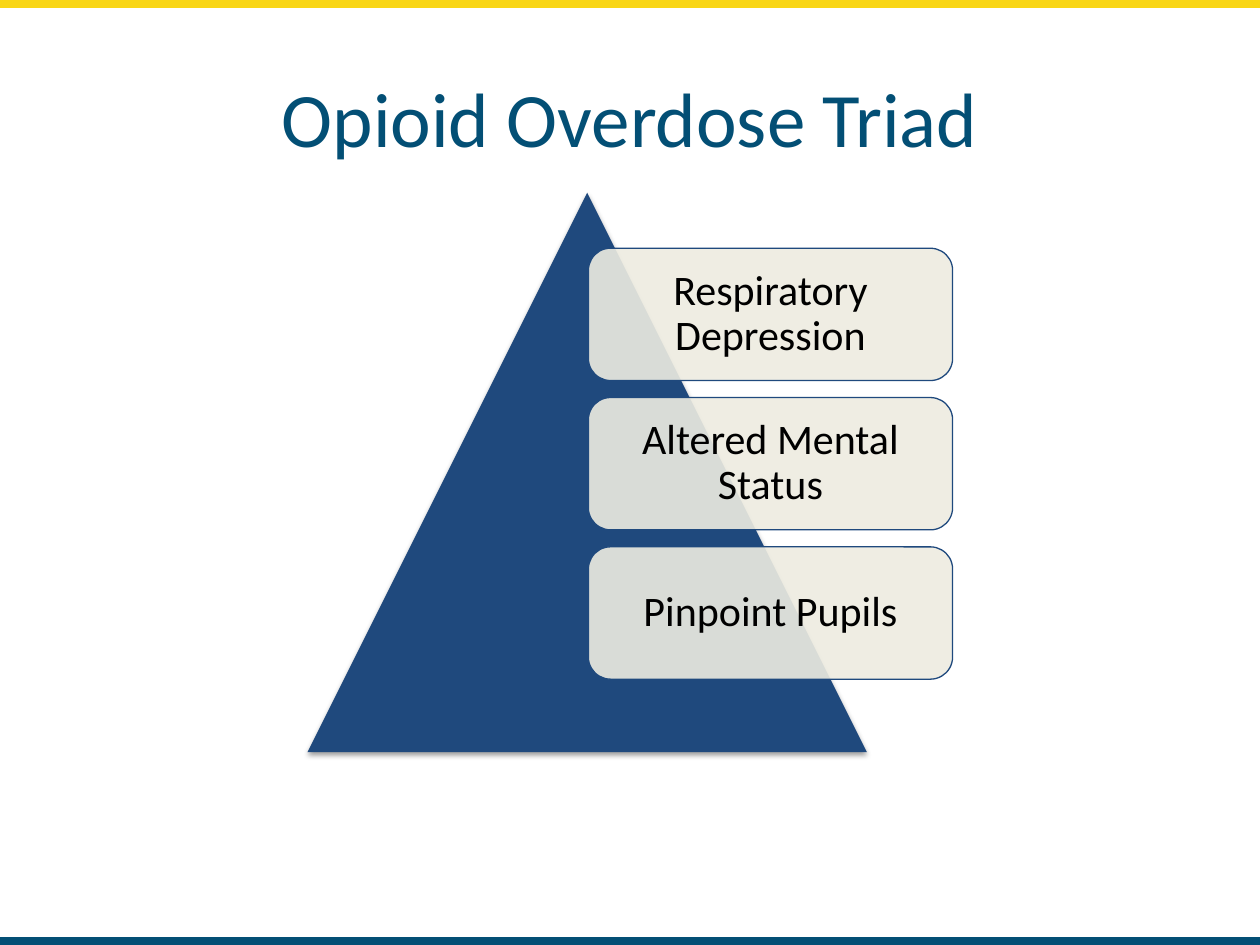
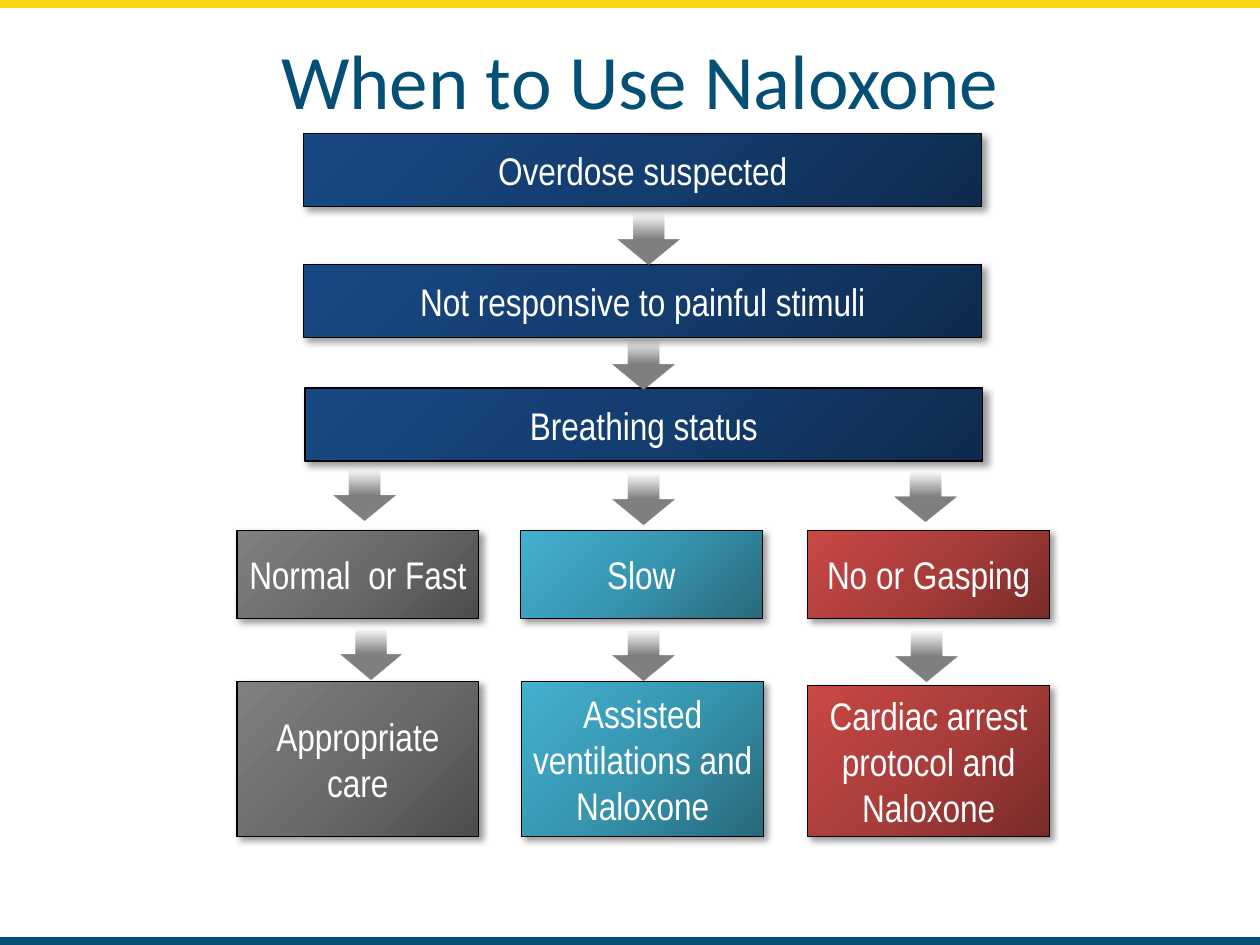
import pptx
import pptx.util
import pptx.dml.color
import pptx.enum.shapes
import pptx.enum.text
import pptx.oxml
import pptx.oxml.ns

Pt = pptx.util.Pt
Kind = pptx.enum.shapes.MSO_SHAPE
qn = pptx.oxml.ns.qn

COLS, ROWS = 100, 75
HEX = {
    "title": "034F75", "gold": "F9D616", "navy": "1F497D", "cream": "EEECE1",
    "black": "000000", "white": "FFFFFF", "gray": "808080",
}
SHADES = {
    "blue": ("0E2B4E", "143D6F", "184884"),
    "gray": ("4C4C4C", "6B6B6B", "808080"),
    "teal": ("27697B", "3795AF", "42B1CF"),
    "red": ("772B29", "A93D3A", "C94844"),
}


def rgb(name):
    return pptx.dml.color.RGBColor.from_string(HEX[name])


def node(xml):
    """Parse an XML snippet whose root is in the drawing namespace."""
    return pptx.oxml.parse_xml(xml.replace(" ", f" {pptx.oxml.ns.nsdecls('a')} ", 1))


class Deck:
    """Holds the style and the current slide; places are (col, row, cols, rows)."""

    def __init__(self):
        self.show = pptx.Presentation()
        self.show.slide_width = pptx.util.Inches(10)
        self.show.slide_height = pptx.util.Inches(7.5)
        self.slide = None

    def place(self, at):
        wide, high = self.show.slide_width, self.show.slide_height
        units = (wide / COLS, high / ROWS) * 2
        return [round(length * unit) for length, unit in zip(at, units)]

    def start(self, title, at):
        """Open a slide with its title and the two edge bands."""
        self.slide = self.show.slides.add_slide(self.show.slide_layouts[5])
        head = self.slide.shapes.title
        head.left, head.top, head.width, head.height = self.place(at)
        self.label(head, title, 44, "Calibri", "title")
        for row, color in ((ROWS - 0.5, "title"), (0, "gold")):
            self.shape(Kind.RECTANGLE, (0, row, COLS, 0.5), color, (color, 2))

    def shape(self, kind, at, fill=None, line=None):
        item = self.slide.shapes.add_shape(kind, *self.place(at))
        item.shadow.inherit = False
        if fill:
            item.fill.solid()
            item.fill.fore_color.rgb = rgb(fill)
        if line:
            item.line.color.rgb = rgb(line[0])
            item.line.width = Pt(line[1])
        else:
            item.line.fill.background()
        return item

    def label(self, item, text, size, font, color, inset=(0.1, 0.05), spacing=None):
        frame = item.text_frame
        frame.text = text
        frame.word_wrap = True
        frame.vertical_anchor = pptx.enum.text.MSO_ANCHOR.MIDDLE
        frame.margin_left = frame.margin_right = pptx.util.Inches(inset[0])
        frame.margin_top = frame.margin_bottom = pptx.util.Inches(inset[1])
        para = frame.paragraphs[0]
        para.alignment = pptx.enum.text.PP_ALIGN.CENTER
        if spacing:
            para.line_spacing = spacing
        for run in para.runs:
            run.font.size = Pt(size)
            run.font.name = font
            run.font.color.rgb = rgb(color)

    def shade(self, item, angle, stops):
        """Fill with (hex, alpha percent) stops, evenly spread, angle clockwise."""
        item.fill.gradient()
        item.fill.gradient_angle = 360 - angle
        grad = item._element.spPr.find(qn("a:gradFill"))
        points = grad.find(qn("a:gsLst"))
        for old in list(points):
            points.remove(old)
        for index, (color, alpha) in enumerate(stops):
            points.append(node(
                f'<a:gs pos="{index * 100000 // (len(stops) - 1)}">'
                f'<a:srgbClr val="{color}"><a:alpha val="{alpha * 1000}"/>'
                f'</a:srgbClr></a:gs>'))

    def shadow(self, item, alpha, blur, dist, angle):
        item._element.spPr.find(qn("a:effectLst")).append(node(
            f'<a:outerShdw blurRad="{Pt(blur)}" dist="{Pt(dist)}" '
            f'dir="{angle * 60000}" algn="ctr" rotWithShape="0">'
            f'<a:srgbClr val="{HEX["black"]}"><a:alpha val="{alpha * 1000}"/>'
            f'</a:srgbClr></a:outerShdw>'))

    def card(self, text, at):
        item = self.shape(Kind.ROUNDED_RECTANGLE, at, "cream", ("navy", 0.75))
        color = item._element.spPr.find(qn("a:solidFill")).find(qn("a:srgbClr"))
        color.append(node('<a:alpha val="90000"/>'))
        self.label(item, text, 24, "Calibri", "black", (0.1, 0.1), 0.9)

    def step(self, text, at, tone):
        item = self.shape(Kind.RECTANGLE, at, line=("black", 0.75))
        self.shade(item, 225, [(color, 100) for color in SHADES[tone]])
        self.shadow(item, 40, 4, 3, 45)
        self.label(item, text, 22, "Arial Narrow", "white", (0.07, 0.04))

    def arrow(self, col, row):
        item = self.shape(Kind.DOWN_ARROW, (col, row, 4.9, 4))
        self.shade(item, 90, [(HEX["gray"], alpha) for alpha in (0, 100, 100)])


def triad(deck):
    deck.start("Opioid Overdose Triad", (5, 3, 90, 12.5))
    peak = deck.shape(Kind.ISOSCELES_TRIANGLE, (24.4, 15.3, 44.4, 44.4), "navy")
    deck.shadow(peak, 38, 3.1, 1.6, 90)
    signs = ("Respiratory Depression", "Altered Mental Status", "Pinpoint Pupils")
    for index, sign in enumerate(signs):
        deck.card(sign, (46.7, 19.7 + 11.85 * index, 28.9, 10.5))


def flow(deck):
    deck.start("When to Use Naloxone", (5.8, 0, 90, 12.5))
    checks = (
        ("Overdose suspected", 24.1, 10.6),
        ("Not responsive to painful stimuli", 24.1, 21),
        ("Breathing status", 24.2, 30.8),
    )
    for text, col, row in checks:
        deck.step(text, (col, row, 53.8, 5.8), "blue")

    # Tone, status and its column, care with its column and row, two arrows.
    lanes = (
        ("gray", "Normal  or Fast", 18.8, "Appropriate care", 18.8, 54.1,
         ((26.5, 37.3), (27, 49.9))),
        ("teal", "Slow", 41.3, "Assisted ventilations and Naloxone", 41.4, 54.1,
         ((48.6, 37.6), (48.6, 50))),
        ("red", "No or Gasping", 64.1, "Cardiac arrest protocol and Naloxone",
         64.1, 54.4, ((71, 37.4), (71.1, 50.1))),
    )
    arrows = [(49, 17), (48.6, 26.9)]
    for tone, status, col, care, left, top, pair in lanes:
        deck.step(status, (col, 42.1, 19.2, 7), tone)
        deck.step(care, (left, top, 19.2, 66.4 - top), tone)
        arrows.extend(pair)
    for col, row in arrows:
        deck.arrow(col, row)


def main():
    deck = Deck()
    triad(deck)
    flow(deck)
    deck.show.save("out.pptx")


if __name__ == "__main__":
    main()
